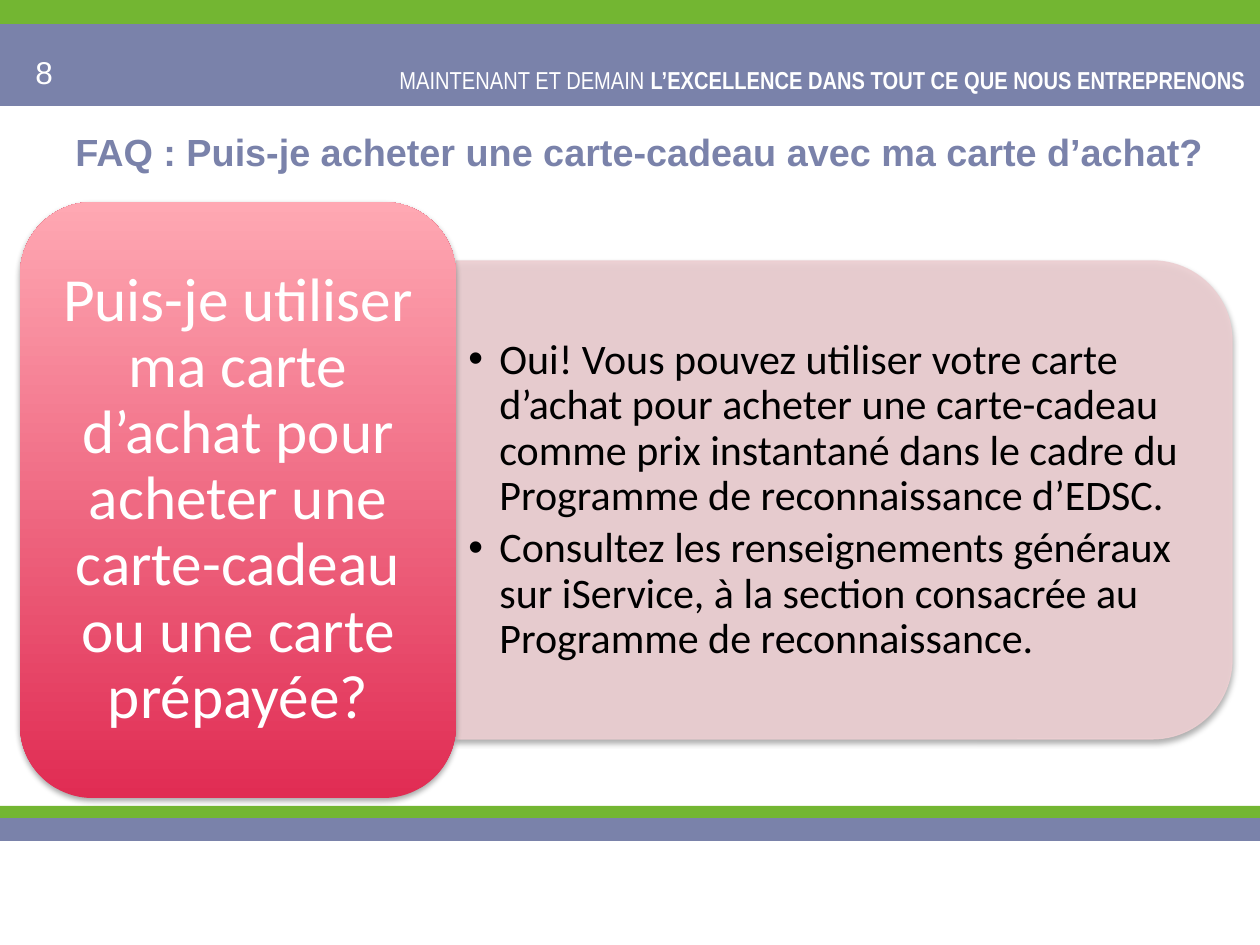
from dataclasses import dataclass

from lxml import etree
from pptx import Presentation
from pptx.dml.color import RGBColor
from pptx.enum.shapes import MSO_SHAPE
from pptx.enum.text import MSO_ANCHOR, PP_ALIGN
from pptx.oxml.ns import qn
from pptx.util import Emu, Pt

RECT = MSO_SHAPE.RECTANGLE
ROUND = MSO_SHAPE.ROUNDED_RECTANGLE
TAB = MSO_SHAPE.ROUND_2_SAME_RECTANGLE
TOP, MIDDLE = MSO_ANCHOR.TOP, MSO_ANCHOR.MIDDLE
LEFT, CENTER, RIGHT = PP_ALIGN.LEFT, PP_ALIGN.CENTER, PP_ALIGN.RIGHT


@dataclass(frozen=True)
class Theme:
    slate: str = "7A82AA"
    green: str = "73B632"
    white: str = "FFFFFF"
    black: str = "000000"
    blush: str = "ECCFD2"
    rose: str = "FFA8B3"
    red: str = "E02C53"
    sans: str = "Arial"
    narrow: str = "Arial Narrow"
    body: str = "Calibri"
    page_size: float = 18
    motto_size: float = 14
    title_size: float = 21.6
    ask_size: float = 35
    reply_size: float = 24


THEME = Theme()
BARS = [
    (24, 82, THEME.slate),
    (0, 24, THEME.green),
    (818, 23, THEME.slate),
    (806, 12, THEME.green),
]
MOTTO = [
    ("MAINTENANT ET DEMAIN ", False),
    ("L’EXCELLENCE DANS TOUT CE QUE NOUS ENTREPRENONS", True),
]
TITLE = "FAQ\u00a0: Puis-je acheter une carte-cadeau avec ma carte d’achat?"
ASK = "Puis-je utiliser ma carte d’achat pour acheter une carte-cadeau ou une carte prépayée?"
REPLIES = [
    "Oui! Vous pouvez utiliser votre carte d’achat pour acheter une carte-cadeau "
    "comme prix instantané dans le cadre du Programme de reconnaissance d’EDSC.",
    "Consultez les renseignements généraux sur iService, à la section consacrée "
    "au Programme de reconnaissance.",
]


def px(n):
    return Emu(round(n * 914400 / 126))


def node(parent, tag, **attrs):
    return etree.SubElement(parent, qn(tag), {k: str(v) for k, v in attrs.items()})


def add_box(slide, kind, area):
    shape = slide.shapes.add_shape(kind, *map(px, area))
    shape.shadow.inherit = False
    shape.line.fill.background()
    return shape


def add_bar(slide, top, height, color):
    bar = add_box(slide, RECT, (0, top, 1260, height))
    bar.fill.solid()
    bar.fill.fore_color.rgb = RGBColor.from_string(color)


def add_shadow(shape):
    effects = shape._element.spPr.find(qn("a:effectLst"))
    outer = node(effects, "a:outerShdw", blurRad=Pt(3.1), dist=Pt(1.8),
                 dir=5400000, rotWithShape=0)
    color = node(outer, "a:srgbClr", val=THEME.black)
    node(color, "a:alpha", val=35000)


def set_glass(fill, color):
    """Fill with a colour at 90 % opacity."""
    fill.solid()
    fill.fore_color.rgb = RGBColor.from_string(color)
    node(fill._xPr.find(qn("a:solidFill"))[0], "a:alpha", val=90000)


def add_panel(slide, area):
    """Add a tab shape turned so that its round corners face right."""
    left, top, width, height = area
    shift = (width - height) // 2
    panel = add_box(slide, TAB, (left + shift, top - shift, height, width))
    panel.rotation = 90
    set_glass(panel.fill, THEME.blush)
    set_glass(panel.line.fill, THEME.blush)
    panel.line.width = Pt(0.75)
    add_shadow(panel)


def add_card(slide, area):
    card = add_box(slide, ROUND, area)
    card.fill.gradient()
    card.fill.gradient_angle = 90
    for stop, place, color in zip(card.fill.gradient_stops, (0, 1), (THEME.red, THEME.rose)):
        stop.position = place
        stop.color.rgb = RGBColor.from_string(color)
    add_shadow(card)


def set_bullet(para):
    props = para._p.get_or_add_pPr()
    props.set("marL", str(px(31)))
    props.set("indent", str(-px(31)))
    node(props, "a:buFont", typeface=THEME.sans)
    node(props, "a:buChar", char="•")


def add_text(slide, area, paras, face, size, color, align=LEFT, anchor=TOP,
             inset=None, spacing=None, bullets=False):
    """Add paragraphs, each a list of (text, bold) runs."""
    frame = slide.shapes.add_textbox(*map(px, area)).text_frame
    frame.word_wrap = True
    frame.vertical_anchor = anchor
    if inset:
        frame.margin_left = frame.margin_right = px(inset[0])
        frame.margin_top = frame.margin_bottom = px(inset[1])
    for i, runs in enumerate(paras):
        para = frame.add_paragraph() if i else frame.paragraphs[0]
        para.alignment = align
        if spacing:
            para.line_spacing = spacing
        if bullets:
            para.space_after = Pt(4)
            set_bullet(para)
        for text, bold in runs:
            run = para.add_run()
            run.text = text
            font = run.font
            font.name, font.size, font.bold = face, Pt(size), bold
            font.color.rgb = RGBColor.from_string(color)


def main():
    deck = Presentation()
    deck.slide_width, deck.slide_height = px(1260), px(945)
    slide = deck.slides.add_slide(deck.slide_layouts[6])
    for bar in BARS:
        add_bar(slide, *bar)
    add_text(slide, (23, 47, 294, 50), [[("8", False)]],
             THEME.sans, THEME.page_size, THEME.white)
    add_text(slide, (346, 59, 912, 43), [MOTTO],
             THEME.narrow, THEME.motto_size, THEME.white, RIGHT)
    add_text(slide, (63, 115, 1197, 73), [[(TITLE, True)]],
             THEME.sans, THEME.title_size, THEME.slate, anchor=MIDDLE)
    add_panel(slide, (456, 261, 776, 478))
    add_text(slide, (456, 285, 752, 431), [[(reply, False)] for reply in REPLIES],
             THEME.body, THEME.reply_size, THEME.black,
             anchor=MIDDLE, spacing=0.9, bullets=True)
    add_card(slide, (20, 202, 436, 596))
    add_text(slide, (41, 223, 394, 554), [[(ASK, False)]],
             THEME.body, THEME.ask_size, THEME.white, CENTER, MIDDLE,
             inset=(19, 9), spacing=0.9)
    deck.save("out.pptx")


if __name__ == "__main__":
    main()
